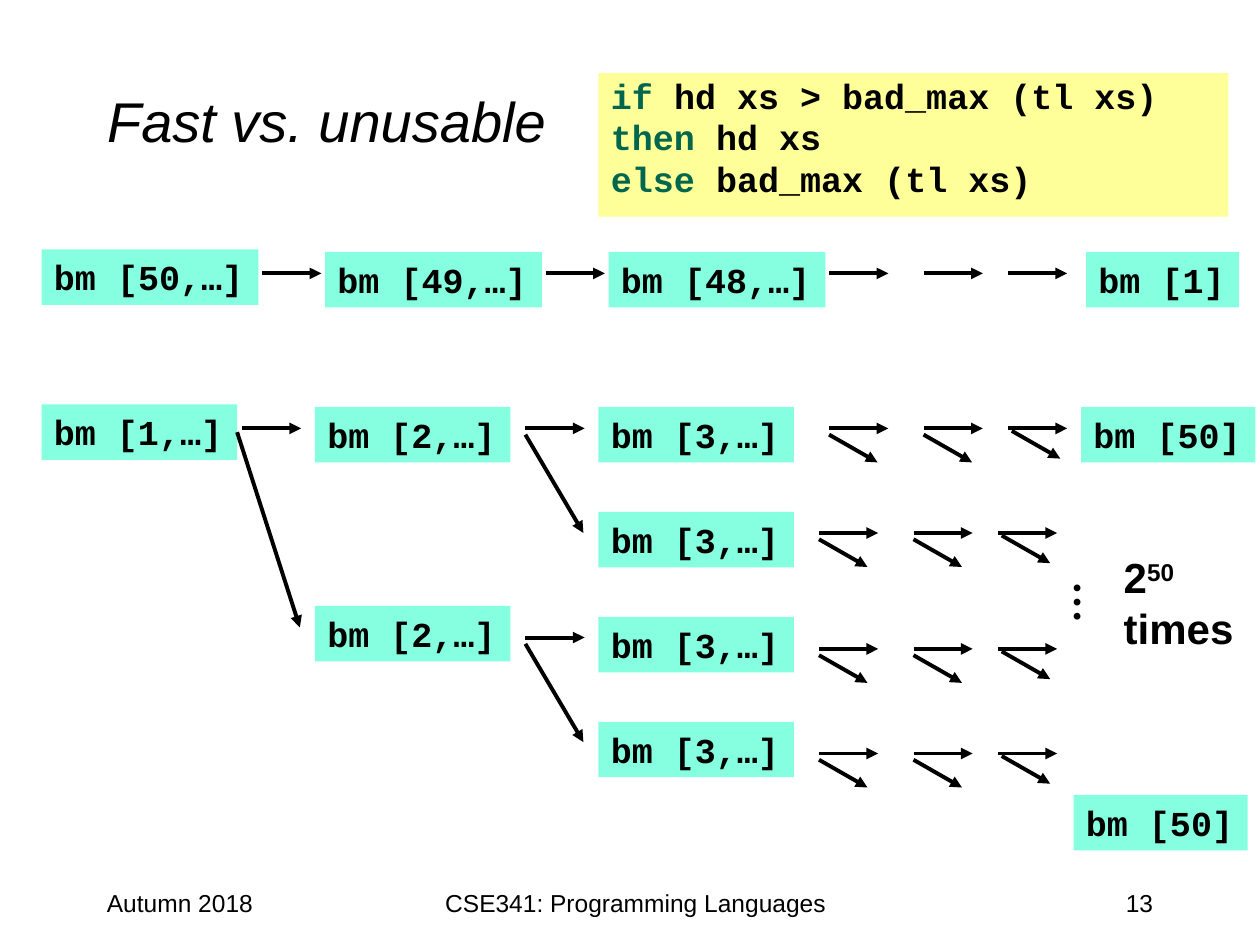
from lxml import etree
from pptx import Presentation
from pptx.dml.color import RGBColor
from pptx.enum.shapes import MSO_CONNECTOR, MSO_SHAPE
from pptx.enum.text import MSO_ANCHOR, PP_ALIGN
from pptx.oxml.ns import qn
from pptx.util import Inches, Pt

BLACK = RGBColor(0x00, 0x00, 0x00)
GREEN = RGBColor(0x00, 0x66, 0x4D)
MINT = RGBColor(0x85, 0xFF, 0xE0)
YELLOW = RGBColor(0xFF, 0xFF, 0x99)
LEFT, CENTER, RIGHT = PP_ALIGN.LEFT, PP_ALIGN.CENTER, PP_ALIGN.RIGHT
TOP, MIDDLE = MSO_ANCHOR.TOP, MSO_ANCHOR.MIDDLE
RECT, STRAIGHT = MSO_SHAPE.RECTANGLE, MSO_CONNECTOR.STRAIGHT
SANS, MONO, SERIF = "Arial", "Courier New", "Times New Roman"
RIGHT_SIDE = 3

CALL_H = 0.44
CHAR_W = 0.169
STEP = 0.47


def style(para, size, name=SANS, bold=False, align=LEFT):
    para.alignment = align
    font = para.font
    font.size, font.name, font.bold = Pt(size), name, bold
    font.color.rgb = BLACK


def add_label(slide, box, text, size, name=SANS, bold=False, align=LEFT, wrap=True):
    label = slide.shapes.add_textbox(*map(Inches, box))
    frame = label.text_frame
    frame.word_wrap = wrap
    frame.text = text
    for para in frame.paragraphs:
        style(para, size, name, bold, align)
    return label


def add_panel(slide, box, color):
    panel = slide.shapes.add_shape(RECT, *map(Inches, box))
    panel.shadow.inherit = False
    panel.fill.solid()
    panel.fill.fore_color.rgb = color
    panel.line.fill.background()
    panel.text_frame.vertical_anchor = TOP
    return panel


def add_call(slide, left, top, args):
    """Place a call box as wide as its monospaced text."""
    text = f"bm [{args}]"
    call = add_panel(slide, (left, top, 0.2 + CHAR_W * len(text), CALL_H), MINT)
    frame = call.text_frame
    frame.word_wrap = False
    frame.text = text
    style(frame.paragraphs[0], 20, MONO, True)
    return call


def add_arrow(slide, x, y, dx=STEP, dy=0):
    arrow = slide.shapes.add_connector(
        STRAIGHT, Inches(x), Inches(y), Inches(x + dx), Inches(y + dy))
    arrow.line.color.rgb = BLACK
    arrow.line.width = Pt(2.25)
    etree.SubElement(arrow.line._get_or_add_ln(), qn("a:tailEnd"), type="triangle")
    etree.SubElement(arrow._element.spPr, qn("a:effectLst"))
    return arrow


def add_steps(slide, x, y, fork=True):
    """Draw three arrows that stand for more calls, each forked if asked."""
    for gap in (0, 0.75, 1.42):
        add_arrow(slide, x + gap, y)
    if fork:
        for gap, drop in ((0, 0.05), (0.75, 0.05), (1.45, 0.02)):
            add_arrow(slide, x + gap, y + drop, 0.385, 0.22)


def add_title(slide, box, text):
    title = slide.shapes.title
    title.left, title.top, title.width, title.height = map(Inches, box)
    frame = title.text_frame
    frame.text = text
    frame.vertical_anchor = MIDDLE
    style(frame.paragraphs[0], 32)
    frame.paragraphs[0].font.italic = True


def add_code(slide, box, lines):
    frame = add_panel(slide, box, YELLOW).text_frame
    frame.word_wrap = True
    for i, (word, rest) in enumerate(lines):
        para = frame.add_paragraph() if i else frame.paragraphs[0]
        style(para, 20, MONO, True)
        para.line_spacing = 0.9
        para.space_before = Pt(2)
        props = para._p.get_or_add_pPr()
        props.set("marL", str(Inches(0.38)))
        props.set("indent", str(-Inches(0.38)))
        key = para.add_run()
        key.text = word + " "
        key.font.color.rgb = GREEN
        para.add_run().text = rest


def add_chain(slide, left, top):
    """Draw the fast case: one call per list element."""
    y = top + 0.19
    for i, (args, drop) in enumerate((("50,…", 0), ("49,…", 0.02), ("48,…", 0.02))):
        x = left + 2.25 * i
        add_call(slide, x, top + drop, args)
        if i < 2:
            add_arrow(slide, x + 1.75, y)
    add_steps(slide, left + 6.25, y, fork=False)
    add_call(slide, left + 8.29, top + 0.02, "1")


def add_tree(slide, left, top):
    """Draw the unusable case: two calls per list element."""
    y = top + 0.19
    root = add_call(slide, left, top, "1,…")
    add_arrow(slide, left + 1.59, y)
    branch = add_arrow(slide, left + 1.55, y, 0.5, 1.58)
    branch.begin_connect(root, RIGHT_SIDE)
    for drop, line in ((0.02, 0.19), (1.6, 1.85)):
        add_call(slide, left + 2.17, top + drop, "2,…")
        add_arrow(slide, left + 3.84, top + line)
        add_arrow(slide, left + 3.84, top + line + 0.05, 0.46, 0.78)
    for i, (x, line) in enumerate(((6.25, 0.19), (6.17, 1.02), (6.17, 1.94), (6.17, 2.77))):
        add_call(slide, left + 4.42, top + 0.02 + 0.833 * i, "3,…")
        add_steps(slide, left + x, top + line)
    add_call(slide, left + 8.25, top + 0.02, "50")
    add_call(slide, left + 8.19, top + 3.1, "50")


def add_count(slide, box):
    left, top = box[:2]
    dots = add_label(slide, (left - 0.43, top + 0.21, 0.54, 0.5), "…", 24, SERIF, True, wrap=False)
    dots.rotation = 90
    label = add_label(slide, box, "2\ntimes", 24, bold=True)
    power = label.text_frame.paragraphs[0].add_run()
    power.text = "50"
    power._r.get_or_add_rPr().set("baseline", "30000")


def add_footer(slide, top):
    for left, width, text, align in (
            (0.75, 2.08, "Autumn 2018", LEFT),
            (3.17, 3.75, "CSE341: Programming Languages", CENTER),
            (7.17, 2.08, "13", RIGHT)):
        add_label(slide, (left, top, width, 0.5), text, 14, align=align)


def main():
    deck = Presentation()
    deck.slide_width, deck.slide_height = Inches(10), Inches(7.5)
    slide = deck.slides.add_slide(deck.slide_layouts.get_by_name("Title Only"))
    add_title(slide, (0.75, 0.33, 8.5, 1.25), "Fast vs. unusable")
    add_code(slide, (4.75, 0.58, 5, 1.14), (
        ("if", "hd xs > bad_max (tl xs)"),
        ("then", "hd xs"),
        ("else", "bad_max (tl xs)")))
    add_chain(slide, 0.33, 1.98)
    add_tree(slide, 0.33, 3.21)
    add_count(slide, (8.82, 4.33, 1.08, 0.91))
    add_footer(slide, 7)
    deck.save("out.pptx")


if __name__ == "__main__":
    main()
